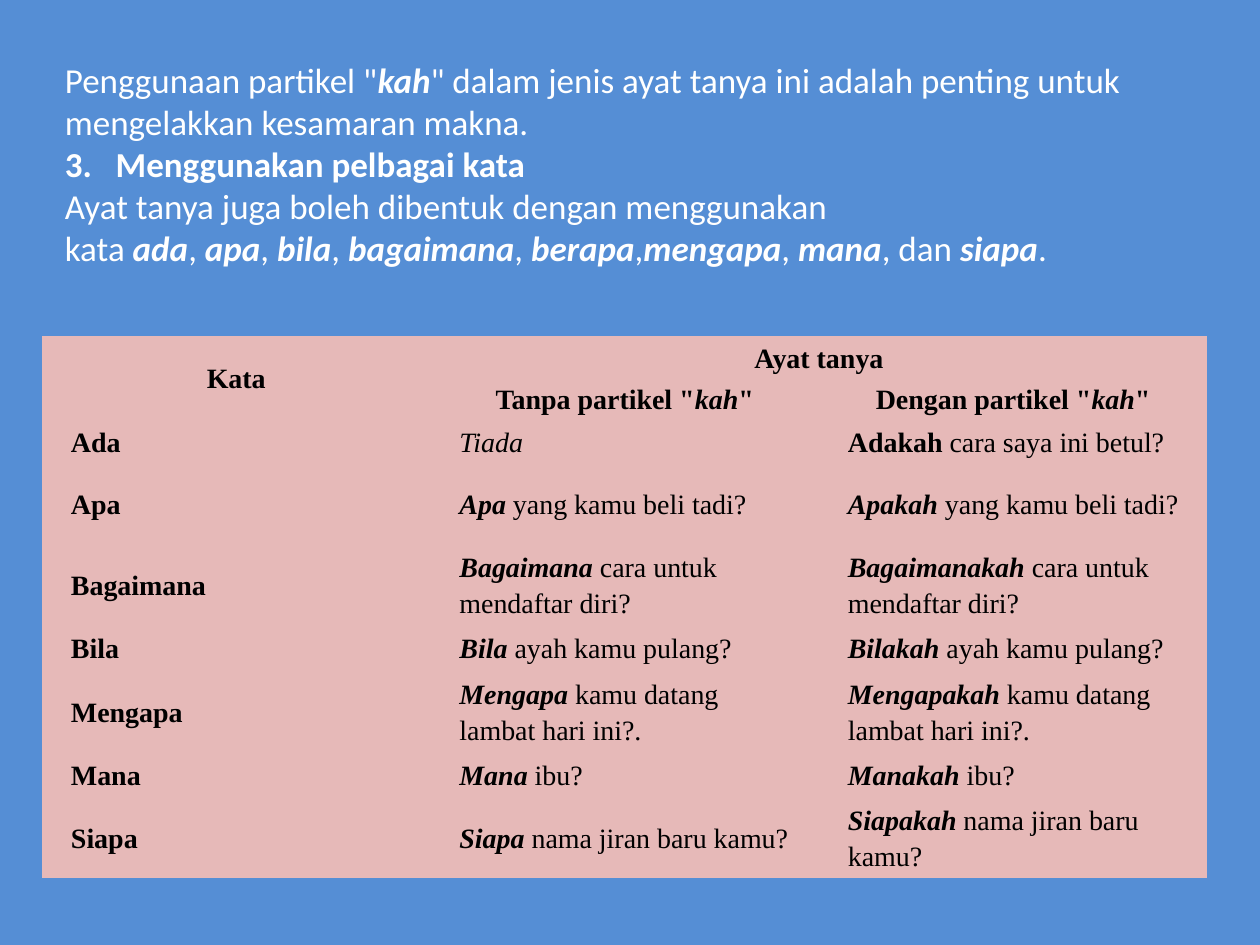
import pptx
import pptx.dml.color
import pptx.enum.text
import pptx.util

Inches, Pt = pptx.util.Inches, pptx.util.Pt
Anchor, Align = pptx.enum.text.MSO_ANCHOR, pptx.enum.text.PP_ALIGN

WIDTH, HEIGHT = Inches(10), Inches(7.5)
COLOURS = {"page": "558ED5", "intro": "FFFFFF", "cell": "E6B9B8", "ink": "000000"}
NBSP = chr(160)  # holds a word and its neighbour on one line
NO_STYLE = "{2D5ABB26-0587-4C30-8999-92F81FD0307C}"  # plain table, no grid

INTRO_FONT = {"name": "Calibri", "size": Pt(20)}
TABLE_FONT = {"name": "Times New Roman", "size": Pt(16)}
HEAD_CELL = {"margin_left": Inches(0.01), "margin_right": Inches(0.01),
             "margin_top": Inches(0.01), "margin_bottom": Inches(0.01),
             "vertical_anchor": Anchor.MIDDLE}
BODY_CELL = {"margin_left": Inches(0.23), "margin_right": Inches(0.23),
             "margin_top": Inches(0.02), "margin_bottom": Inches(0.02),
             "vertical_anchor": Anchor.MIDDLE}

# Each span is (text, style), where the style holds b for bold and i for italic
QUESTION_WORDS = ["ada", "apa", "bila", "bagaimana", "berapa", "mengapa", "mana", "siapa"]
SEPARATORS = {"berapa": ",", "mana": f", dan{NBSP}", "siapa": "."}
WORD_LIST = [span for word in QUESTION_WORDS
             for span in ((word, "bi"), (SEPARATORS.get(word, f",{NBSP}"), ""))]
INTRO = [
    [('Penggunaan partikel "', ""), ("kah", "bi"),
     ('" dalam jenis ayat tanya ini adalah penting untuk mengelakkan kesamaran makna.', "")],
    [(f"3. {NBSP} Menggunakan pelbagai kata", "b")],
    [(f"Ayat tanya juga boleh dibentuk dengan menggunakan kata{NBSP}", ""), *WORD_LIST],
]

# Question word, rest of the sentence, lines of text in the row
QUESTIONS = [
    ("Apa", "yang kamu beli tadi?", 2),
    ("Bagaimana", "cara untuk mendaftar diri?", 2),
    ("Bila", "ayah kamu pulang?", 1),
    ("Mengapa", "kamu datang lambat hari ini?.", 2),
    ("Mana", "ibu?", 1),
    ("Siapa", "nama jiran baru kamu?", 2),
]
HEADINGS = {
    (0, 0): [("Kata", "b")],
    (0, 1): [("Ayat tanya", "b")],
    (1, 1): [('Tanpa partikel "', "b"), ("kah", "bi"), ('"', "b")],
    (1, 2): [('Dengan partikel "', "b"), ("kah", "bi"), ('"', "b")],
}
HEAD_HEIGHT = Inches(0.32)
BODY_HEIGHTS = {1: Inches(0.35), 2: Inches(0.64)}


def apply(target, values):
    for name, value in values.items():
        setattr(target, name, value)


def rgb(name):
    return pptx.dml.color.RGBColor.from_string(COLOURS[name])


def write_spans(para, spans, font, colour):
    for text, style in spans:
        span = para.add_run()
        span.text = text
        apply(span.font, {**font, "bold": "b" in style, "italic": "i" in style})
        span.font.color.rgb = rgb(colour)


def add_intro(page, left, top, width, height):
    box = page.shapes.add_textbox(left, top, width, height)
    frame = box.text_frame
    frame.word_wrap = True
    for index, spans in enumerate(INTRO):
        para = frame.add_paragraph() if index else frame.paragraphs[0]
        write_spans(para, spans, INTRO_FONT, "intro")


def fill_cell(cell, spans, layout, alignment):
    apply(cell, layout)
    para = cell.text_frame.paragraphs[0]
    apply(para, {"alignment": alignment, "line_spacing": 1.15})
    write_spans(para, spans, TABLE_FONT, "ink")


def question_rows():
    yield ([("Ada", "b")], [("Tiada", "i")],
           [("Adakah", "b"), (f"{NBSP}cara saya ini betul?", "")])
    for word, rest, _ in QUESTIONS:
        ending = (NBSP + rest, "")
        yield [(word, "b")], [(word, "bi"), ending], [(word + "kah", "bi"), ending]


def add_question_table(page, left, top, width):
    heights = [HEAD_HEIGHT] * 2 + [BODY_HEIGHTS[1]]
    heights += [BODY_HEIGHTS[lines] for _, _, lines in QUESTIONS]
    holder = page.shapes.add_table(len(heights), 3, left, top, width, sum(heights))
    table = holder.table
    holder.element.xpath(".//a:tableStyleId")[0].text = NO_STYLE
    apply(table, {"first_row": False, "horz_banding": False})
    for row, height in zip(table.rows, heights):
        row.height = height
    for cell in table.iter_cells():
        cell.fill.solid()
        cell.fill.fore_color.rgb = rgb("cell")

    # Headings: one spans two rows, one spans two columns
    table.cell(0, 0).merge(table.cell(1, 0))
    table.cell(0, 1).merge(table.cell(0, 2))
    for (row, column), spans in HEADINGS.items():
        fill_cell(table.cell(row, column), spans, HEAD_CELL, Align.CENTER)

    # Question words with and without the particle
    for row, entries in enumerate(question_rows(), start=2):
        for column, spans in enumerate(entries):
            fill_cell(table.cell(row, column), spans, BODY_CELL, Align.LEFT)


def main():
    deck = pptx.Presentation()
    apply(deck, {"slide_width": WIDTH, "slide_height": HEIGHT})
    page = deck.slides.add_slide(deck.slide_layouts[6])
    page.background.fill.solid()
    page.background.fill.fore_color.rgb = rgb("page")

    # Both regions sit on a grid of 24 columns and 18 rows
    column, row = WIDTH // 24, HEIGHT // 18
    add_intro(page, column, row, int(column * 21.2), int(row * 4.27))
    add_question_table(page, int(column * 0.8), int(row * 6.4), int(column * 22.2))
    deck.save("out.pptx")


if __name__ == "__main__":
    main()
